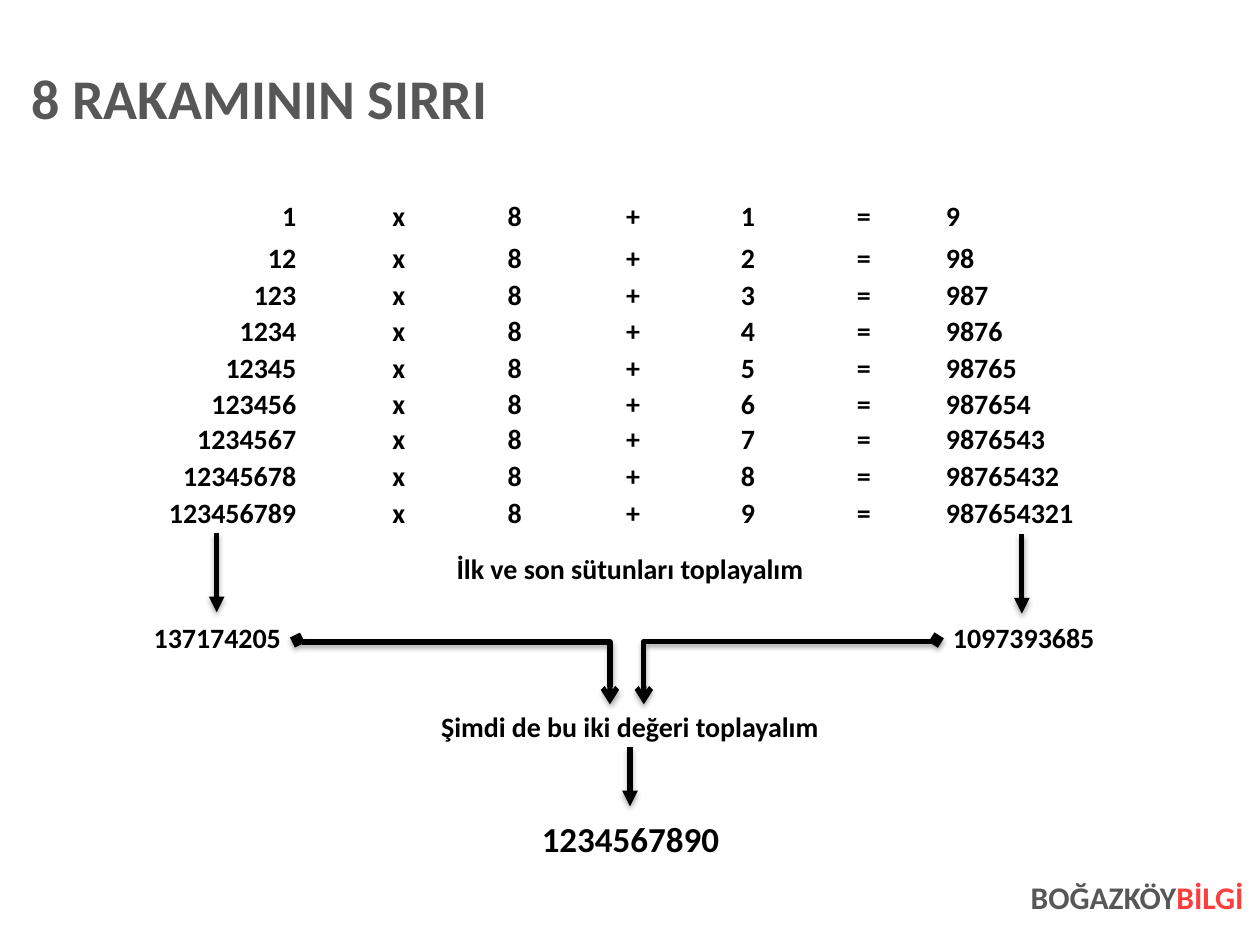
from lxml import etree
from pptx import Presentation
from pptx import util as u
from pptx.dml.color import RGBColor
from pptx.enum import shapes, text
from pptx.oxml import ns

PX = 9144  # EMU per px, 100 px to the inch
FONT = "Calibri"
BLACK = RGBColor(0x00, 0x00, 0x00)
GRAY = RGBColor(0x57, 0x57, 0x57)
RED = RGBColor(0xFB, 0x3E, 0x3E)
LEFT, CENTER, RIGHT = text.PP_ALIGN.LEFT, text.PP_ALIGN.CENTER, text.PP_ALIGN.RIGHT

# Left, width and alignment of the equation columns
COLUMNS = [(88, 157, RIGHT)] + [(x, 79, CENTER) for x in (277, 369, 463, 554, 646)]
COLUMNS.append((741, 157, LEFT))


def px(*lengths):
    return [u.Emu(round(length * PX)) for length in lengths]


def add_run(paragraph, content, size=16, color=BLACK):
    run = paragraph.add_run()
    run.text = content
    run.font.name = FONT
    run.font.size = u.Pt(size)
    run.font.bold = True
    run.font.color.rgb = color


def add_text(slide, content, box, align=CENTER, grow=False, **font):
    shape = slide.shapes.add_textbox(*px(*box))
    frame = shape.text_frame
    frame.word_wrap = True
    if grow:
        frame.auto_size = text.MSO_AUTO_SIZE.SHAPE_TO_FIT_TEXT
    frame.paragraphs[0].alignment = align
    add_run(frame.paragraphs[0], content, **font)
    return shape


def set_insets(frame, horizontal, vertical):
    frame.margin_left = frame.margin_right = px(horizontal)[0]
    frame.margin_top = frame.margin_bottom = px(vertical)[0]


def add_child(parent, tag, **attributes):
    child = etree.SubElement(parent, ns.qn(tag))
    for name, value in attributes.items():
        child.set(name, str(value))
    return child


def style_line(connector, tail, head=None):
    """Thick black line with arrowheads and a soft shadow below it."""
    connector.line.width = u.Pt(3)
    connector.line.color.rgb = BLACK
    line = connector.line._get_or_add_ln()
    if head:
        add_child(line, "a:headEnd", type=head)
    add_child(line, "a:tailEnd", type=tail)
    effects = add_child(connector._element.spPr, "a:effectLst")
    shadow = add_child(effects, "a:outerShdw", blurRad=u.Pt(3.1), dist=u.Pt(1.8),
                       dir=90 * 60000, rotWithShape=0)
    color = add_child(shadow, "a:srgbClr", val=BLACK)
    add_child(color, "a:alpha", val=35000)


def add_down_arrow(slide, x, top, bottom):
    connector = slide.shapes.add_connector(
        shapes.MSO_CONNECTOR.STRAIGHT, *px(x, top, x, bottom))
    style_line(connector, "triangle")


def add_elbow(slide, start, end, bend):
    """Runs sideways from start, then down to end: a turned elbow connector."""
    (x1, y1), (x2, y2) = start, end
    center_x, center_y = (x1 + x2) / 2, (y1 + y2) / 2
    half_width, half_height = (y2 - y1) / 2, abs(x2 - x1) / 2
    connector = slide.shapes.add_connector(
        shapes.MSO_CONNECTOR.ELBOW,
        *px(center_x - half_width, center_y - half_height,
            center_x + half_width, center_y + half_height))
    properties = connector._element.spPr
    transform = properties.find(ns.qn("a:xfrm"))
    rightward = x2 > x1
    transform.set("rot", str((270 if rightward else 90) * 60000))
    if rightward:
        transform.set("flipH", "1")
    geometry = properties.find(ns.qn("a:prstGeom"))
    guides = geometry.find(ns.qn("a:avLst"))
    if guides is None:
        guides = add_child(geometry, "a:avLst")
    add_child(guides, "a:gd", name="adj1", fmla=f"val {bend}")
    style_line(connector, "arrow", head="diamond")


def add_title(slide, content):
    title = slide.shapes.title
    title.left, title.top, title.width, title.height = px(25, 45, 964, 71)
    frame = title.text_frame
    frame.word_wrap = True
    frame.auto_size = text.MSO_AUTO_SIZE.NONE
    frame.vertical_anchor = text.MSO_ANCHOR.MIDDLE
    set_insets(frame, 0, 5)
    frame.paragraphs[0].alignment = LEFT
    frame.paragraphs[0].line_spacing = 0.9
    add_run(frame.paragraphs[0], content, size=32, color=GRAY)


def add_equations(slide):
    ascending, descending = "123456789", "987654321"
    for count in range(1, 10):
        # The first row stands a little apart from the rest
        top = 153 if count == 1 else round(186 + 28.9 * (count - 2))
        cells = [ascending[:count], "x", "8", "+", str(count), "=", descending[:count]]
        for content, (left, width, align) in zip(cells, COLUMNS):
            add_text(slide, content, (left, top, width, 22), align)


def main():
    presentation = Presentation()
    presentation.slide_width, presentation.slide_height = px(1000, 750)
    slide = presentation.slides.add_slide(presentation.slide_layouts[5])

    add_title(slide, "8 RAKAMININ SIRRI")
    add_equations(slide)

    # Column sums
    add_down_arrow(slide, 172, 423, 486)
    add_down_arrow(slide, 811, 424, 487)
    add_text(slide, "İlk ve son sütunları toplayalım", (311, 433, 378, 37), grow=True)
    add_text(slide, "137174205", (89, 488, 167, 37), grow=True)
    add_text(slide, "1097393685", (729, 488, 167, 37), grow=True)

    # Final sum
    add_elbow(slide, (236, 508), (484, 559), 3200)
    add_elbow(slide, (743, 508), (511, 559), 2300)
    add_text(slide, "Şimdi de bu iki değeri toplayalım", (311, 558, 378, 37), grow=True)
    add_down_arrow(slide, 500, 593, 640)
    add_text(slide, "1234567890", (364, 644, 273, 44), grow=True, size=20)

    # Two-colour signature
    signature = add_text(slide, "BOĞAZKÖY", (756, 697, 231, 56), RIGHT, size=18, color=GRAY)
    set_insets(signature.text_frame, 0, 0)
    add_run(signature.text_frame.paragraphs[0], "BİLGİ", size=18, color=RED)

    presentation.save("out.pptx")


if __name__ == "__main__":
    main()
